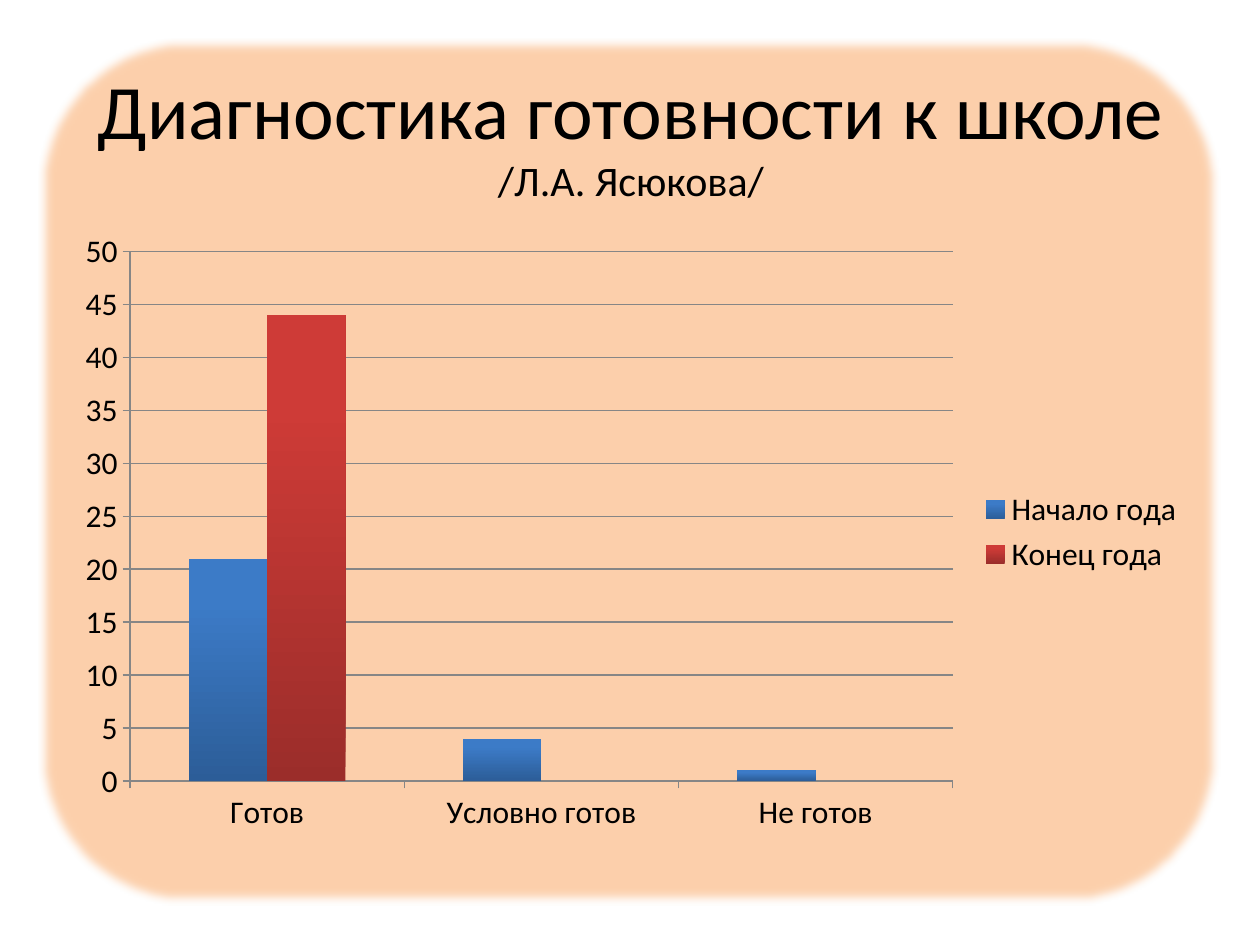
from lxml import etree
from pptx import Presentation
from pptx import util as u
from pptx.chart.data import CategoryChartData
from pptx.dml.color import RGBColor
from pptx.enum import chart as charts, shapes, text
from pptx.oxml.ns import qn

FONT = "Calibri"
PX = 914400 / 126  # EMU in one px
BLACK = RGBColor(0x00, 0x00, 0x00)
PEACH = RGBColor(0xFA, 0xC0, 0x90)
GREY = RGBColor(0x86, 0x86, 0x86)

CATEGORIES = ["Готов", "Условно готов", "Не готов"]
# Name, values, colour at the foot, colour at the top of a bar
SERIES = [
    ("Начало года", (21, 4, 1),
     RGBColor(0x2C, 0x5D, 0x98), RGBColor(0x3C, 0x7B, 0xC7)),
    ("Конец года", (44, 0, 0),
     RGBColor(0x9B, 0x2D, 0x2A), RGBColor(0xCE, 0x3B, 0x37)),
]


def px(*lengths):
    return [u.Emu(round(length * PX)) for length in lengths]


def add_panel(page, *frame):
    panel = page.shapes.add_shape(
        shapes.MSO_SHAPE.ROUNDED_RECTANGLE, *px(*frame))
    panel.shadow.inherit = False
    panel.fill.solid()
    panel.fill.fore_color.rgb = PEACH
    panel.line.fill.background()

    # Transparency and soft edge
    properties = panel._element.spPr
    colour = properties.find(qn("a:solidFill"))[0]
    etree.SubElement(colour, qn("a:alpha"), val="75000")
    effects = properties.find(qn("a:effectLst"))
    etree.SubElement(effects, qn("a:softEdge"), rad="63500")


def set_title(page, heading, author, *frame):
    title = page.shapes.title
    title.left, title.top, title.width, title.height = px(*frame)
    # Keep the title in front of the panel
    page.shapes._spTree.append(title._element)
    title.text_frame.vertical_anchor = text.MSO_ANCHOR.MIDDLE
    para = title.text_frame.paragraphs[0]
    para.alignment = text.PP_ALIGN.CENTER
    para.font.name = FONT
    para.font.color.rgb = BLACK
    for words, size in ((heading, 44), (author, 24)):
        if para.runs:
            para.add_line_break()
        span = para.add_run()
        span.text = words
        span.font.size = u.Pt(size)


def style_line(line):
    line.color.rgb = GREY
    line.width = u.Pt(0.75)


def add_column_chart(page, *frame):
    data = CategoryChartData()
    data.categories = CATEGORIES
    for name, values, _, _ in SERIES:
        data.add_series(name, values)
    chart = page.shapes.add_chart(
        charts.XL_CHART_TYPE.COLUMN_CLUSTERED, *px(*frame), data).chart
    chart.has_title = False
    chart.font.name = FONT
    chart.font.size = u.Pt(18)
    chart.font.color.rgb = BLACK

    # Axes and grid
    for axis in (chart.category_axis, chart.value_axis):
        axis.major_tick_mark = charts.XL_TICK_MARK.OUTSIDE
        style_line(axis.format.line)
    scale = chart.value_axis
    scale.minimum_scale, scale.maximum_scale, scale.major_unit = 0, 50, 5
    scale.has_major_gridlines = True
    style_line(scale.major_gridlines.format.line)

    # Legend
    chart.has_legend = True
    chart.legend.position = charts.XL_LEGEND_POSITION.RIGHT
    chart.legend.include_in_layout = False

    # Bars
    plot = chart.plots[0]
    plot.gap_width = 150
    plot.vary_by_categories = False
    for series, (_, _, foot, top) in zip(plot.series, SERIES):
        series.invert_if_negative = False
        fill = series.format.fill
        fill.gradient()
        fill.gradient_angle = 90
        for stop, colour, position in zip(
                fill.gradient_stops, (foot, top), (0, 0.8)):
            stop.color.rgb = colour
            stop.position = position


def main():
    deck = Presentation()
    deck.slide_width, deck.slide_height = px(1260, 945)
    page = deck.slides.add_slide(deck.slide_layouts[5])
    add_panel(page, 39, 39, 1182, 867)
    set_title(page, "Диагностика готовности к школе", "/Л.А. Ясюкова/",
              64, 55, 1134, 158)
    add_column_chart(page, 63, 220, 1134, 624)
    deck.save("out.pptx")


if __name__ == "__main__":
    main()
